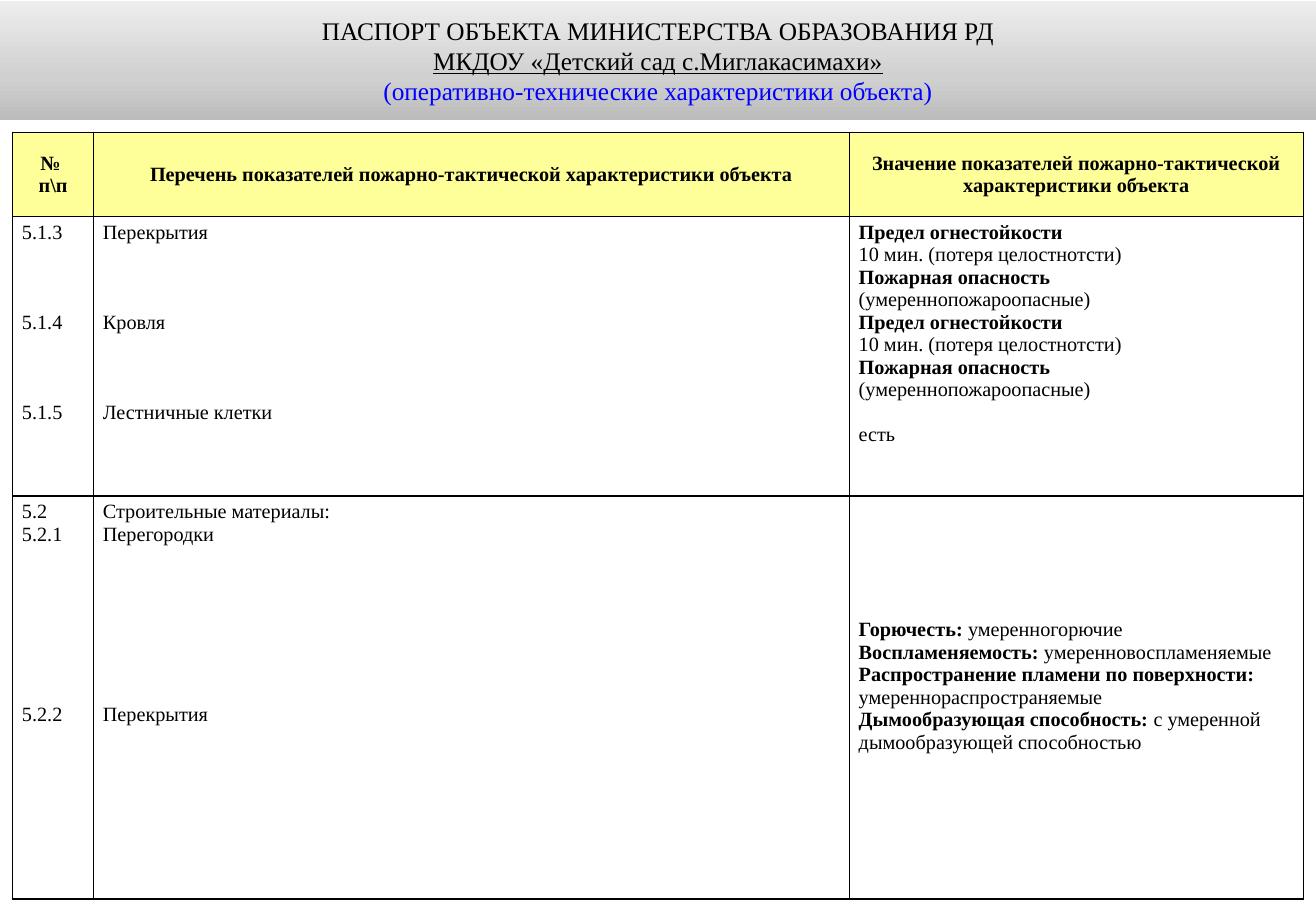
from lxml.etree import SubElement
from pptx import Presentation
from pptx.dml.color import RGBColor
from pptx.enum.text import MSO_ANCHOR as Anchor, PP_ALIGN as Align
from pptx.oxml import parse_xml
from pptx.oxml.ns import nsdecls, qn
from pptx.util import Pt

BLACK = RGBColor(0x00, 0x00, 0x00)
BLUE = RGBColor(0x00, 0x00, 0xFF)
YELLOW = RGBColor(0xFF, 0xFF, 0x99)
WHITE = RGBColor(0xFF, 0xFF, 0xFF)
BANNER_STOPS = [(0, RGBColor(0xBC, 0xBC, 0xBC)), (35, RGBColor(0xD0, 0xD0, 0xD0)),
                (100, RGBColor(0xED, 0xED, 0xED))]
FONT = "Times New Roman"
LINE = 13.35  # height of one table text line

# Content
HEADING = [
    ("ПАСПОРТ ОБЪЕКТА МИНИСТЕРСТВА ОБРАЗОВАНИЯ РД", BLACK, False),
    ("МКДОУ «Детский сад с.Миглакасимахи»", BLACK, True),
    ("(оперативно-технические характеристики объекта)", BLUE, False),
]
# A table line is (lines of space above, bold text, regular text)
FIRE_RATING = [
    (0, "Предел огнестойкости", ""),
    (0, "", "10 мин. (потеря целостнотсти)"),
    (0, "Пожарная опасность", ""),
    (0, "", "(умереннопожароопасные)"),
]
MATERIAL_RATING = [
    (0, "Горючесть: ", "умеренногорючие"),
    (0, "Воспламеняемость: ", "умеренновоспламеняемые"),
    (0, "Распространение пламени по поверхности:", ""),
    (0, "", "умереннораспространяемые"),
    (0, "Дымообразующая способность: ", "с умеренной дымообразующей способностью"),
]
ROWS = [
    [[(0, "№ ", ""), (0, "п\\п", "")],
     [(0, "Перечень показателей пожарно-тактической характеристики объекта", "")],
     [(0, "Значение показателей пожарно-тактической характеристики объекта", "")]],
    [[(0, "", "5.1.3"), (3, "", "5.1.4"), (3, "", "5.1.5")],
     [(0, "", "Перекрытия"), (3, "", "Кровля"), (3, "", "Лестничные клетки")],
     FIRE_RATING * 2 + [(1, "", "есть")]],
    [[(0, "", "5.2"), (0, "", "5.2.1"), (7, "", "5.2.2")],
     [(0, "", "Строительные материалы:"), (0, "", "Перегородки"), (7, "", "Перекрытия")],
     MATERIAL_RATING],
]
COLUMN_WIDTHS = [48, 448, 269]
ROW_HEIGHTS = [50, 165.5, 239]


def style(run, size, color, bold=False, underline=False):
    run.font.name = FONT
    run.font.size = Pt(size)
    run.font.color.rgb = color
    run.font.bold = bold
    run.font.underline = underline


def add_borders(cell):
    properties = cell._tc.get_or_add_tcPr()
    for position, side in enumerate(("lnL", "lnR", "lnT", "lnB")):
        properties.insert(position, parse_xml(
            f'<a:{side} {nsdecls("a")} w="{Pt(1)}"><a:solidFill>'
            f'<a:srgbClr val="{BLACK}"/></a:solidFill></a:{side}>'))


def fill_cell(cell, lines, is_header, is_centred):
    cell.fill.solid()
    cell.fill.fore_color.rgb = YELLOW if is_header else WHITE
    add_borders(cell)
    cell.margin_left = cell.margin_right = Pt(5.5)
    cell.margin_top = cell.margin_bottom = Pt(2.75)
    cell.vertical_anchor = Anchor.MIDDLE if is_centred else Anchor.TOP
    frame = cell.text_frame
    frame.text = "\n".join("" for _ in lines)
    for paragraph, (gap, bold_text, regular_text) in zip(frame.paragraphs, lines):
        paragraph.alignment = Align.CENTER if is_header else Align.LEFT
        paragraph.space_before = Pt(gap * LINE)
        for text, bold in ((bold_text, True), (regular_text, False)):
            if text:
                run = paragraph.add_run()
                run.text = text
                style(run, 12, BLACK, bold)


deck = Presentation()
deck.slide_width, deck.slide_height = Pt(780), Pt(540)
slide = deck.slides.add_slide(deck.slide_layouts[5])

# Heading banner
banner = slide.shapes.title
banner.left, banner.top, banner.width, banner.height = Pt(0), Pt(0.5), Pt(780), Pt(70.5)
banner.fill.gradient()
banner.fill.gradient_angle = 90
stops = banner._element.spPr.find(qn("a:gradFill")).find(qn("a:gsLst"))
for old_stop in list(stops):
    stops.remove(old_stop)
for percent, color in BANNER_STOPS:
    stop = SubElement(stops, qn("a:gs"), pos=str(percent * 1000))
    SubElement(stop, qn("a:srgbClr"), val=str(color))
banner.text_frame.text = "\n".join(text for text, _, _ in HEADING)
banner.text_frame.vertical_anchor = Anchor.MIDDLE
for paragraph, (_, color, underline) in zip(banner.text_frame.paragraphs, HEADING):
    paragraph.alignment = Align.CENTER
    style(paragraph.runs[0], 15, color, underline=underline)

# Table of characteristics
table = slide.shapes.add_table(len(ROWS), len(COLUMN_WIDTHS), Pt(7.5), Pt(78.5),
                               Pt(sum(COLUMN_WIDTHS)), Pt(sum(ROW_HEIGHTS))).table
table.first_row = table.horz_banding = False
for column, width in zip(table.columns, COLUMN_WIDTHS):
    column.width = Pt(width)
for row, height in zip(table.rows, ROW_HEIGHTS):
    row.height = Pt(height)
for row_index, row in enumerate(ROWS):
    for column_index, lines in enumerate(row):
        fill_cell(table.cell(row_index, column_index), lines,
                  row_index == 0, row_index == 0 or lines is MATERIAL_RATING)

# The material rating sits half a line above the middle of its cell
table.cell(2, 2).margin_bottom = Pt(2.75 + LINE)

deck.save("out.pptx")
